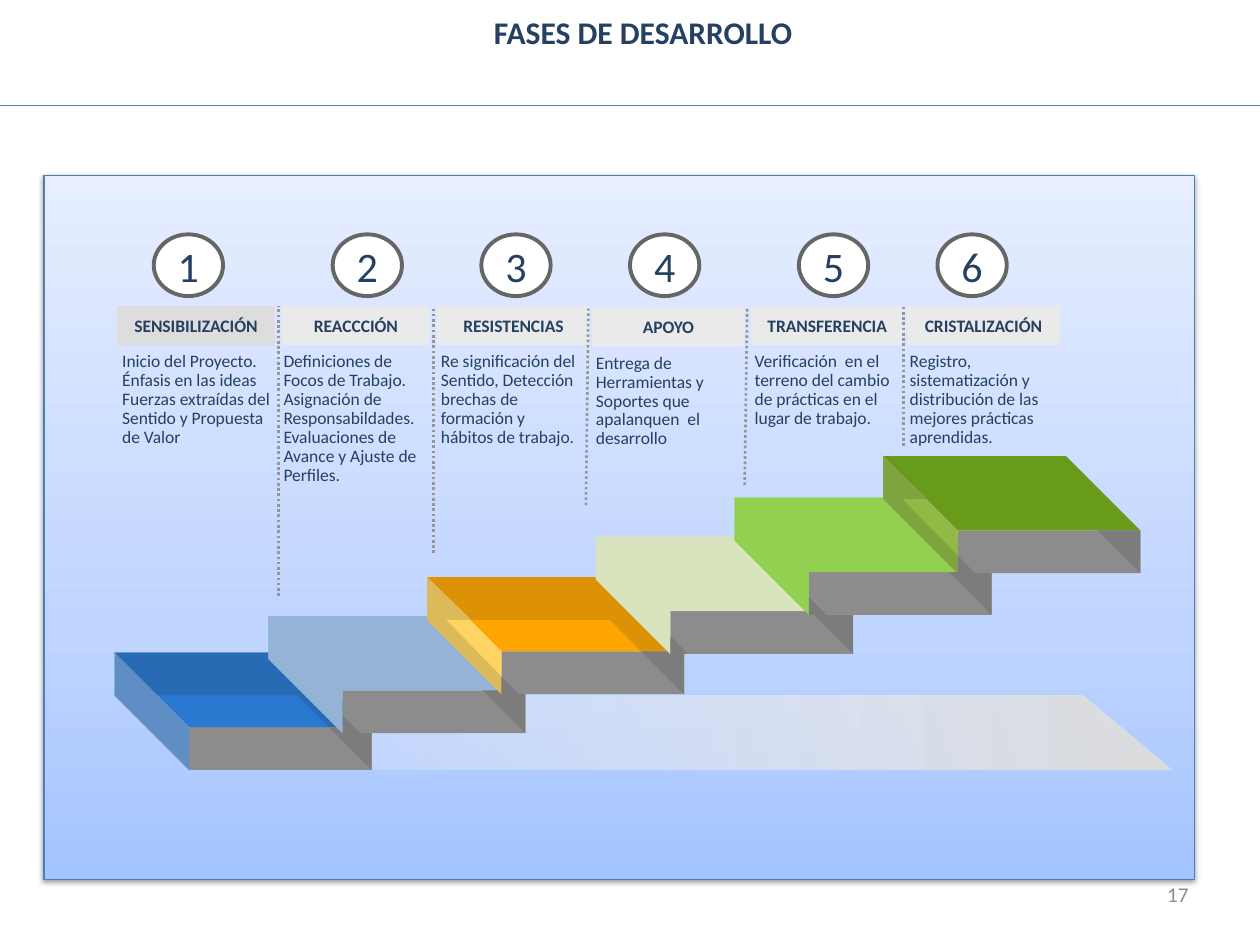
from lxml import etree
from pptx import Presentation
from pptx.dml.color import RGBColor
from pptx.enum.dml import MSO_LINE
from pptx.enum.shapes import MSO_CONNECTOR, MSO_SHAPE
from pptx.enum.text import MSO_ANCHOR, MSO_AUTO_SIZE, PP_ALIGN
from pptx.oxml import parse_xml
from pptx.oxml.ns import qn
from pptx.util import Inches, Pt

RECT, OVAL, SLANT = MSO_SHAPE.RECTANGLE, MSO_SHAPE.OVAL, MSO_SHAPE.PARALLELOGRAM
STRAIGHT, DOTTED = MSO_CONNECTOR.STRAIGHT, MSO_LINE.ROUND_DOT
LEFT, CENTER, RIGHT = PP_ALIGN.LEFT, PP_ALIGN.CENTER, PP_ALIGN.RIGHT
TOP, MIDDLE = MSO_ANCHOR.TOP, MSO_ANCHOR.MIDDLE
NS = 'xmlns:a="http://schemas.openxmlformats.org/drawingml/2006/main"'

COLORS = {
    "text": "254061", "number": "8C8C8C", "rule": "4B7EBC", "dots": "969696",
    "ring": "666666", "white": "FFFFFF", "first_label": "DDDDDD",
    "label": "EAEAEA", "front": "8C8C8C", "front_shade": "7C7C7C",
}


def write(sp, text, size=10, color="text", bold=False, align=LEFT,
          anchor=TOP, spacing=None, inset=None, wrap=True):
    tf = sp.text_frame
    tf.auto_size = MSO_AUTO_SIZE.NONE
    tf.word_wrap = wrap
    tf.vertical_anchor = anchor
    if inset is not None:
        tf.margin_left = tf.margin_right = Inches(inset)
        tf.margin_top = tf.margin_bottom = Inches(inset)
    p = tf.paragraphs[0]
    p.alignment = align
    if spacing:
        p.line_spacing = spacing
    r = p.add_run()
    r.text = text
    r.font.name = "Calibri"
    r.font.size = Pt(size)
    r.font.bold = bold
    r.font.color.rgb = RGBColor.from_string(COLORS[color])


def paint(sp, fill, line=None, width=0.75):
    sp.shadow.inherit = False
    sp.fill.solid()
    sp.fill.fore_color.rgb = RGBColor.from_string(fill)
    if line:
        sp.line.color.rgb = RGBColor.from_string(line)
        sp.line.width = Pt(width)
    else:
        sp.line.fill.background()


prs = Presentation()
prs.slide_width, prs.slide_height = Inches(10), Inches(7.5)
s = prs.slides.add_slide(prs.slide_layouts[5])
shapes = s.shapes

# Title and slide number
title = shapes.title
title.left, title.top = Inches(2.48), Inches(0.05)
title.width, title.height = Inches(5.25), Inches(0.4)
write(title, "FASES DE DESARROLLO", size=18, bold=True, align=CENTER)

# Background panel and floor shadow, both with gradients
panel = shapes.add_shape(RECT, Inches(0.35), Inches(1.39), Inches(9.13), Inches(5.59))
paint(panel, COLORS["white"], COLORS["rule"])
floor = shapes.add_shape(SLANT, Inches(0.91), Inches(5.52), Inches(8.39), Inches(0.59))
paint(floor, COLORS["white"])
floor.adjustments[0] = 1.2
floor._element.spPr.find(qn("a:xfrm")).set("flipV", "1")

gradients = [
    (panel, 270, [(0, "A4C4FF", 100), (35, "BFD4FF", 100), (100, "E6EEFF", 100)]),
    (floor, 0, [(0, "FFFFFF", 0), (100, "DDDDDD", 100)]),
]
for sp, angle, stops in gradients:
    gs = "".join(
        f'<a:gs pos="{pos * 1000}"><a:srgbClr val="{color}">'
        f'<a:alpha val="{alpha * 1000}"/></a:srgbClr></a:gs>'
        for pos, color, alpha in stops)
    spPr = sp._element.spPr
    spPr.replace(spPr.find(qn("a:solidFill")), parse_xml(
        f'<a:gradFill {NS} rotWithShape="1"><a:gsLst>{gs}</a:gsLst>'
        f'<a:lin ang="{angle * 60000}" scaled="0"/></a:gradFill>'))

panel._element.spPr.find(qn("a:effectLst")).append(parse_xml(
    f'<a:outerShdw {NS} blurRad="{Pt(3.1)}" dist="{Pt(1.6)}" dir="5400000" '
    'rotWithShape="0"><a:srgbClr val="000000"><a:alpha val="38000"/>'
    '</a:srgbClr></a:outerShdw>'))

number = shapes.add_textbox(Inches(8.54), Inches(6.9), Inches(0.99), Inches(0.4))
write(number, "17", size=12, color="number", align=RIGHT, anchor=MIDDLE)

# Phases: circle left, label left and width, text left and width, top, name, text
phases = [
    (1.22, 0.93, 1.25, 0.97, 1.2, 2.43, "SENSIBILIZACIÓN",
     "Inicio del Proyecto. Énfasis en las ideas Fuerzas extraídas del "
     "Sentido y Propuesta de Valor"),
    (2.64, 2.24, 1.17, 2.25, 1.18, 2.43, "REACCCIÓN",
     "Definiciones de Focos de Trabajo. Asignación de Responsabildades. "
     "Evaluaciones de Avance y Ajuste de Perfiles."),
    (3.82, 3.47, 1.21, 3.5, 1.07, 2.43, "RESISTENCIAS",
     "Re significación del Sentido, Detección brechas de formación y "
     "hábitos de trabajo."),
    (5, 4.7, 1.21, 4.73, 1.26, 2.44, "APOYO",
     "Entrega de Herramientas y Soportes que apalanquen  el desarrollo"),
    (6.34, 5.96, 1.21, 5.99, 1.14, 2.43, "TRANSFERENCIA",
     "Verificación  en el terreno del cambio de prácticas en el lugar de trabajo."),
    (7.44, 7.2, 1.21, 7.22, 1.26, 2.43, "CRISTALIZACIÓN",
     "Registro, sistematización y distribución de las mejores prácticas aprendidas."),
]
for i, (cx, lx, lw, tx, tw, top, name, text) in enumerate(phases, 1):
    label = shapes.add_shape(RECT, Inches(lx), Inches(top), Inches(lw), Inches(0.31))
    paint(label, COLORS["first_label" if i == 1 else "label"])
    write(label, name, bold=True, align=CENTER, anchor=MIDDLE, inset=0)

    box = shapes.add_textbox(Inches(tx), Inches(top + 0.37), Inches(tw), Inches(1.4))
    write(box, text, spacing=0.9, inset=0)

    circle = shapes.add_shape(OVAL, Inches(cx), Inches(1.86), Inches(0.55), Inches(0.49))
    paint(circle, COLORS["white"], COLORS["ring"], 2.25)
    write(circle, str(i), size=24, align=CENTER, anchor=MIDDLE, wrap=False)

# Header rule and dotted separators: x1, y1, x2, y2, colour, width, dash
lines = [
    (0, 0.84, 10, 0.84, "rule", 0.75, None),
    (2.21, 4.73, 2.21, 2.43, "dots", 1.5, DOTTED),
    (3.44, 4.39, 3.44, 2.44, "dots", 1.5, DOTTED),
    (4.65, 4.01, 4.67, 2.45, "dots", 1.5, DOTTED),
    (5.91, 3.85, 5.93, 2.44, "dots", 1.5, DOTTED),
    (7.17, 3.54, 7.17, 2.44, "dots", 1.5, DOTTED),
]
for x1, y1, x2, y2, color, width, dash in lines:
    line = shapes.add_connector(STRAIGHT, Inches(x1), Inches(y1), Inches(x2), Inches(y2))
    line.line.color.rgb = RGBColor.from_string(COLORS[color])
    line.line.width = Pt(width)
    if dash:
        line.line.dash_style = dash
    etree.SubElement(line._element.spPr, qn("a:effectLst"))

# Staircase: every step has the same width, depth and height
W, D, H = 1.45, 0.59, 0.34
TOP_FACE = [(0, 0), (W, 0), (W + D, D), (D, D)]
SIDE_FACE = [(0, 0), (0, H), (D, D + H), (D, D)]
TOP_SHADE = [(W, 0), (0, 0), (H, H), (W, H), (W + 0.25, D), (W + D, D)]
SIDE_SHADE = [(0, 0), (0, H), (D, D + H), (D, D + 0.2), (0.15, H), (0.35, H)]
FRONT_LEFT = [(D, D + 0.2), (D, D + H), (D + 0.14, D + H)]
FRONT_RIGHT = [(W + D, D), (W + 0.25, D), (W + D, D + H)]

# x, y, then colours of top, side, top shade and side shade
steps = [
    (0.91, 5.18, "2A79D0", "69A2E1", "286BB5", "5E8EC4"),
    (2.13, 4.89, "95B3D7", "95B3D7", "95B3D7", "95B3D7"),
    (3.39, 4.58, "FEA501", "FED563", "DD9105", "DDBA59"),
    (4.73, 4.26, "D7E4BD", "D7E4BD", "D7E4BD", "D7E4BD"),
    (5.83, 3.95, "92D050", "92D050", "92D050", "92D050"),
    (7.01, 3.62, "699B1A", "90BA45", None, "7FA33F"),
]
for i, (x, y, top, side, top_shade, side_shade) in enumerate(steps):
    front = shapes.add_shape(RECT, Inches(x + D), Inches(y + D), Inches(W), Inches(H))
    paint(front, COLORS["front"])
    first = i == 0
    faces = [
        ([TOP_FACE], top),
        ([SIDE_FACE], side),
        ([TOP_SHADE], top_shade),
        ([SIDE_FACE if first else SIDE_SHADE], side_shade),
        ([FRONT_RIGHT] if first else [FRONT_LEFT, FRONT_RIGHT], COLORS["front_shade"]),
    ]
    for outlines, color in faces:
        if color is None:
            continue
        fb = None
        for outline in outlines:
            pts = [(Inches(x + dx), Inches(y + dy)) for dx, dy in outline]
            if fb is None:
                fb = shapes.build_freeform(*pts[0])
            else:
                fb.move_to(*pts[0])
            fb.add_line_segments(pts[1:], close=True)
        paint(fb.convert_to_shape(), color)

prs.save("out.pptx")
